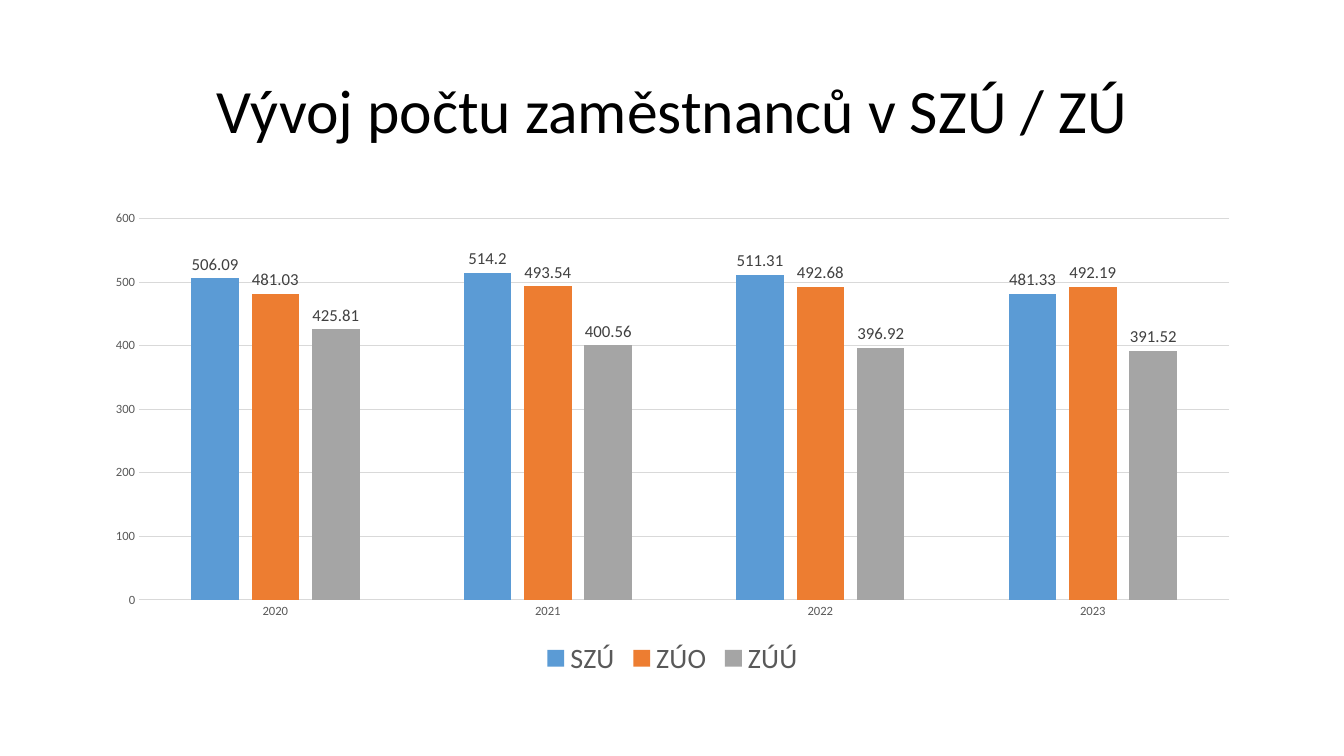
from dataclasses import dataclass

from pptx import Presentation
from pptx.chart.axis import _BaseAxis as Axis
from pptx.chart.chart import Chart
from pptx.chart.data import CategoryChartData as Data
from pptx.dml.color import RGBColor
from pptx.enum.chart import XL_CHART_TYPE as Kind
from pptx.enum.chart import XL_LABEL_POSITION as Place
from pptx.enum.chart import XL_LEGEND_POSITION as Side
from pptx.enum.chart import XL_TICK_MARK as Tick
from pptx.enum.text import MSO_ANCHOR as Anchor
from pptx.enum.text import PP_ALIGN as Align
from pptx.slide import Slide
from pptx.text.text import Font
from pptx.util import Inches, Pt

BLACK = RGBColor(0x00, 0x00, 0x00)
DARK = RGBColor(0x40, 0x40, 0x40)
GREY = RGBColor(0x59, 0x59, 0x59)
PALE = RGBColor(0xD9, 0xD9, 0xD9)
BLUE = RGBColor(0x5B, 0x9B, 0xD5)
ORANGE = RGBColor(0xED, 0x7D, 0x31)
SILVER = RGBColor(0xA5, 0xA5, 0xA5)

LEFT, WIDTH = Inches(0.92), Inches(11.5)
YEARS = ("2020", "2021", "2022", "2023")


@dataclass(frozen=True)
class Staff:
    name: str
    counts: tuple[float, ...]
    color: RGBColor


STAFF = (
    Staff("SZÚ", (506.09, 514.2, 511.31, 481.33), BLUE),
    Staff("ZÚO", (481.03, 493.54, 492.68, 492.19), ORANGE),
    Staff("ZÚÚ", (425.81, 400.56, 396.92, 391.52), SILVER),
)


def set_font(font: Font, size: float, color: RGBColor) -> None:
    font.name = "Calibri"
    font.size = Pt(size)
    font.bold = False
    font.color.rgb = color


def add_title(slide: Slide, text: str) -> None:
    title = slide.shapes.title
    title.left, title.top = LEFT, Inches(0.4)
    title.width, title.height = WIDTH, Inches(1.45)
    frame = title.text_frame
    frame.vertical_anchor = Anchor.MIDDLE
    para = frame.paragraphs[0]
    para.alignment = Align.CENTER
    para.line_spacing = 0.9
    run = para.add_run()
    run.text = text
    set_font(run.font, 44, BLACK)


def style_axis(axis: Axis) -> None:
    axis.major_tick_mark = axis.minor_tick_mark = Tick.NONE
    set_font(axis.tick_labels.font, 9, GREY)


def style_bars(chart: Chart) -> None:
    plot = chart.plots[0]
    plot.gap_width, plot.overlap = 219, -27
    plot.vary_by_categories = False
    for bars, staff in zip(plot.series, STAFF):
        bars.format.fill.solid()
        bars.format.fill.fore_color.rgb = staff.color
        bars.invert_if_negative = False
        labels = bars.data_labels
        labels.show_value = True
        labels.position = Place.OUTSIDE_END
        set_font(labels.font, 12, DARK)


def add_chart(slide: Slide) -> None:
    data = Data()
    data.categories = YEARS
    for staff in STAFF:
        data.add_series(staff.name, staff.counts)
    chart = slide.shapes.add_chart(
        Kind.COLUMN_CLUSTERED, LEFT, Inches(2), WIDTH, Inches(4.76), data
    ).chart
    set_font(chart.font, 10, BLACK)
    chart.has_title = False
    style_bars(chart)

    # Axes and grid
    years, scale = chart.category_axis, chart.value_axis
    for axis in (years, scale):
        style_axis(axis)
    scale.minimum_scale, scale.maximum_scale = 0, 600
    scale.major_unit = 100
    scale.format.line.fill.background()
    for line in (years.format.line, scale.major_gridlines.format.line):
        line.color.rgb = PALE
        line.width = Pt(0.75)

    # Legend
    chart.has_legend = True
    chart.legend.position = Side.BOTTOM
    chart.legend.include_in_layout = False
    set_font(chart.legend.font, 20, GREY)


def main() -> None:
    deck = Presentation()
    deck.slide_width, deck.slide_height = Inches(13.33), Inches(7.5)
    slide = deck.slides.add_slide(deck.slide_layouts[5])
    add_title(slide, "Vývoj počtu zaměstnanců v SZÚ / ZÚ")
    add_chart(slide)
    deck.save("out.pptx")


if __name__ == "__main__":
    main()
